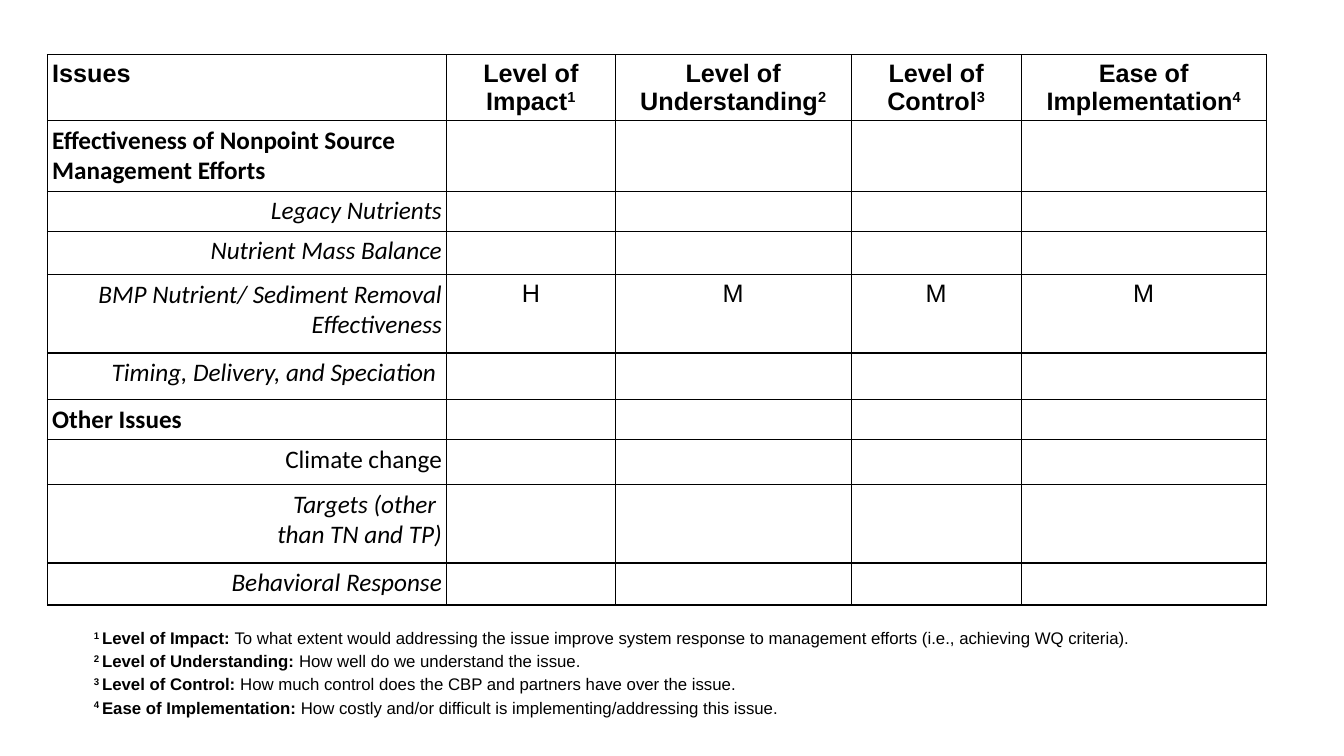
from dataclasses import dataclass

from lxml.etree import SubElement
from pptx import Presentation
from pptx.dml.color import RGBColor
from pptx.enum.text import PP_ALIGN
from pptx.oxml.ns import qn
from pptx.util import Pt

BLACK, WHITE = "000000", "FFFFFF"
LEFT, CENTER, RIGHT = PP_ALIGN.LEFT, PP_ALIGN.CENTER, PP_ALIGN.RIGHT


@dataclass
class Issue:
    label: str
    height: float
    bold: bool = False
    italic: bool = True
    ratings: str = ""


@dataclass
class Criterion:
    name: str
    width: float
    note: str


ISSUE_WIDTH, HEADER_HEIGHT = 285, 47
CELL_MARGIN = 3.3

CRITERIA = [
    Criterion("Level of Impact", 120.5,
              "To what extent would addressing the issue improve system response "
              "to management efforts (i.e., achieving WQ criteria)."),
    Criterion("Level of Understanding", 168.5, "How well do we understand the issue."),
    Criterion("Level of Control", 121.5,
              "How much control does the CBP and partners have over the issue."),
    Criterion("Ease of Implementation", 175,
              "How costly and/or difficult is implementing/addressing this issue."),
]

ISSUES = [
    Issue("Effectiveness of Nonpoint Source Management Efforts", 50, bold=True, italic=False),
    Issue("Legacy Nutrients", 28.5),
    Issue("Nutrient Mass Balance", 31),
    Issue("BMP Nutrient/ Sediment Removal Effectiveness", 56, ratings="HMMM"),
    Issue("Timing, Delivery, and Speciation\u00a0", 33.5),
    Issue("Other Issues", 28.5, bold=True, italic=False),
    Issue("Climate change", 32, italic=False),
    Issue("Targets (other \nthan TN and TP)", 56),
    Issue("Behavioral Response", 30),
]


def color(value: str) -> RGBColor:
    return RGBColor.from_string(value)


def format_paragraph(p, size: float, name: str = "Arial", bold: bool | None = None,
                     italic: bool = False, align: PP_ALIGN = LEFT) -> None:
    p.alignment = align
    p.font.size, p.font.name = Pt(size), name
    p.font.bold, p.font.italic = bold, italic
    p.font.color.rgb = color(BLACK)


def add_run(p, text: str, bold: bool | None = None, superscript: bool = False) -> None:
    r = p.add_run()
    r.text = text
    if bold is not None:
        r.font.bold = bold
    if superscript:
        r._r.get_or_add_rPr().set("baseline", "30000")


def format_cell(cell) -> None:
    cell.margin_left = cell.margin_right = Pt(CELL_MARGIN)
    cell.margin_top = cell.margin_bottom = Pt(CELL_MARGIN)
    tcPr = cell._tc.get_or_add_tcPr()
    for side in ("a:lnL", "a:lnR", "a:lnT", "a:lnB"):
        ln = SubElement(tcPr, qn(side), w=str(Pt(1)))
        fill = SubElement(ln, qn("a:solidFill"))
        SubElement(fill, qn("a:srgbClr"), val=BLACK)
    cell.fill.solid()
    cell.fill.fore_color.rgb = color(WHITE)


def fill_cell(cell, text: str, name: str = "Arial", bold: bool = False,
              italic: bool = False, align: PP_ALIGN = LEFT) -> None:
    cell.text_frame.text = text
    for p in cell.text_frame.paragraphs:
        format_paragraph(p, 18, name, bold, italic, align)


def add_issue_table(s) -> None:
    widths = [ISSUE_WIDTH] + [c.width for c in CRITERIA]
    heights = [HEADER_HEIGHT] + [i.height for i in ISSUES]
    table = s.shapes.add_table(len(heights), len(widths), Pt(34), Pt(39),
                               Pt(sum(widths)), Pt(sum(heights))).table
    table.first_row = table.horz_banding = False
    for column, width in zip(table.columns, widths):
        column.width = Pt(width)
    for row, height in zip(table.rows, heights):
        row.height = Pt(height)
    for cell in table.iter_cells():
        format_cell(cell)

    # Header row
    fill_cell(table.cell(0, 0), "Issues", bold=True)
    for number, criterion in enumerate(CRITERIA, 1):
        cell = table.cell(0, number)
        fill_cell(cell, criterion.name, bold=True, align=CENTER)
        add_run(cell.text_frame.paragraphs[0], str(number), superscript=True)

    # Issue rows
    for row, issue in enumerate(ISSUES, 1):
        fill_cell(table.cell(row, 0), issue.label, "Calibri", issue.bold, issue.italic,
                  LEFT if issue.bold else RIGHT)
        for column, rating in enumerate(issue.ratings, 1):
            fill_cell(table.cell(row, column), rating, align=CENTER)


def add_footnotes(s) -> None:
    tf = s.shapes.add_textbox(Pt(60), Pt(439), Pt(840), Pt(79)).text_frame
    tf.word_wrap = True
    tf.margin_left = tf.margin_right = tf.margin_top = tf.margin_bottom = Pt(7.2)
    for number, criterion in enumerate(CRITERIA, 1):
        p = tf.paragraphs[0] if number == 1 else tf.add_paragraph()
        format_paragraph(p, 12)
        p.line_spacing = 1.15
        add_run(p, f"{number} ", bold=True, superscript=True)
        add_run(p, f"{criterion.name}: ", bold=True)
        add_run(p, criterion.note, bold=False)


def main() -> None:
    prs = Presentation()
    prs.slide_width, prs.slide_height = Pt(960), Pt(540)
    s = prs.slides.add_slide(prs.slide_layouts[6])
    add_issue_table(s)
    add_footnotes(s)
    prs.save("out.pptx")


if __name__ == "__main__":
    main()
